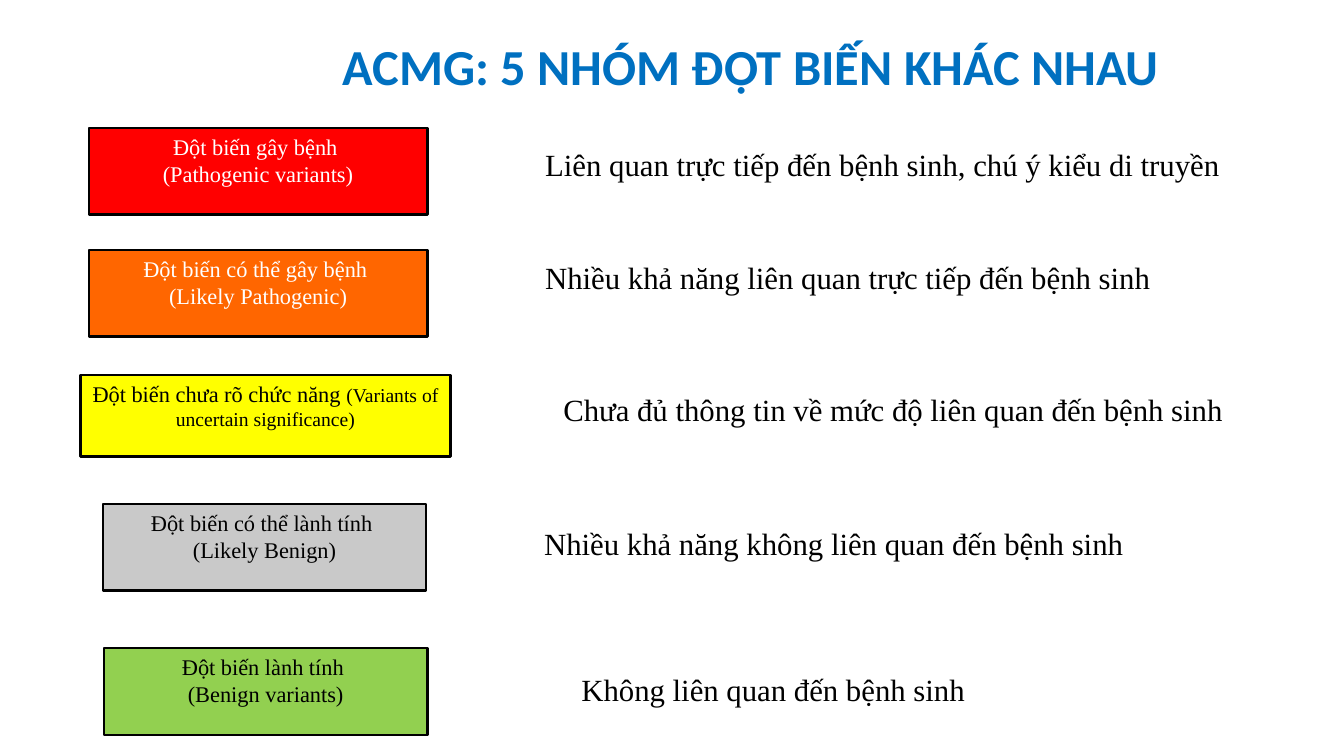
from pptx import Presentation
from pptx.dml.color import RGBColor as RGB
from pptx.enum.shapes import MSO_SHAPE as SHAPE
from pptx.enum.text import MSO_ANCHOR as ANCHOR, PP_ALIGN as ALIGN
from pptx.util import Pt

HUES = {"blue": "0070C0", "red": "FF0000", "orange": "FF6600",
        "yellow": "FFFF00", "gray": "C9C9C9", "green": "92D050",
        "white": "FFFFFF", "black": "000000"}
SERIF = "Times New Roman"

ROWS = [
    ((63.4, 91.4, 241.9, 61.9), "red", "white",
     "Đột biến gây bệnh \n(Pathogenic variants)", "",
     (382.3, 100.8, 519.8, 33.8),
     "Liên quan trực tiếp đến bệnh sinh, chú ý kiểu di truyền"),
    ((63.4, 178.6, 241.9, 61.9), "orange", "white",
     "Đột biến có thể gây bệnh \n(Likely Pathogenic)", "",
     (382.3, 181.4, 506.9, 33.8),
     "Nhiều khả năng liên quan trực tiếp đến bệnh sinh"),
    ((57.6, 267.8, 264.2, 58.3), "yellow", "black",
     "Đột biến chưa rõ chức năng ", "(Variants of uncertain significance)",
     (395.3, 275.8, 506.9, 33.8),
     "Chưa đủ thông tin về mức độ liên quan đến bệnh sinh"),
    ((73.4, 360, 231.1, 61.9), "gray", "black",
     "Đột biến có thể lành tính \n(Likely Benign)", "",
     (381.6, 371.5, 493.9, 33.8),
     "Nhiều khả năng không liên quan đến bệnh sinh"),
    ((74.2, 463, 231.1, 61.9), "green", "black",
     "Đột biến lành tính \n(Benign variants)", "",
     (408.2, 475.9, 379.4, 33.8),
     "Không liên quan đến bệnh sinh"),
]


def style(frame, size, hue, face=SERIF, bold=False, align=ALIGN.LEFT):
    """Format every run of a text frame."""
    frame.word_wrap = True
    for para in frame.paragraphs:
        para.alignment = align
        for run in para.runs:
            font = run.font
            font.name, font.size, font.bold = face, Pt(size), bold
            font.color.rgb = RGB.from_string(HUES[hue])


def add_title(slide, box):
    """Place the centred heading in its box."""
    frame = slide.shapes.add_textbox(*map(Pt, box)).text_frame
    frame.text = "ACMG: 5 NHÓM ĐỘT BIẾN KHÁC NHAU"
    frame.vertical_anchor = ANCHOR.MIDDLE
    frame.paragraphs[0].line_spacing = 0.9
    style(frame, 36, "blue", "Calibri", True, ALIGN.CENTER)


def add_class(slide, box, fill, ink, name, small):
    """Draw the coloured box that names a variant class."""
    rect = slide.shapes.add_shape(SHAPE.RECTANGLE, *map(Pt, box))
    rect.shadow.inherit = False
    rect.fill.solid()
    rect.fill.fore_color.rgb = RGB.from_string(HUES[fill])
    rect.line.color.rgb = RGB.from_string(HUES["black"])
    rect.line.width = Pt(1.75)
    frame = rect.text_frame
    frame.text = name
    frame.vertical_anchor = ANCHOR.TOP
    if small:
        frame.paragraphs[0].add_run().text = small
    style(frame, 16, ink, align=ALIGN.CENTER)
    if small:
        frame.paragraphs[0].runs[-1].font.size = Pt(14)


def add_note(slide, box, text):
    """Place the meaning of a variant class in its box."""
    frame = slide.shapes.add_textbox(*map(Pt, box)).text_frame
    frame.text = text
    style(frame, 22, "black")


def main():
    """Build and save the slide."""
    deck = Presentation()
    deck.slide_width, deck.slide_height = Pt(960), Pt(540)
    slide = deck.slides.add_slide(deck.slide_layouts[6])
    add_title(slide, (212.4, 4.3, 648, 90))
    for box, fill, ink, name, small, spot, note in ROWS:
        add_class(slide, box, fill, ink, name, small)
        add_note(slide, spot, note)
    deck.save("out.pptx")


if __name__ == "__main__":
    main()
